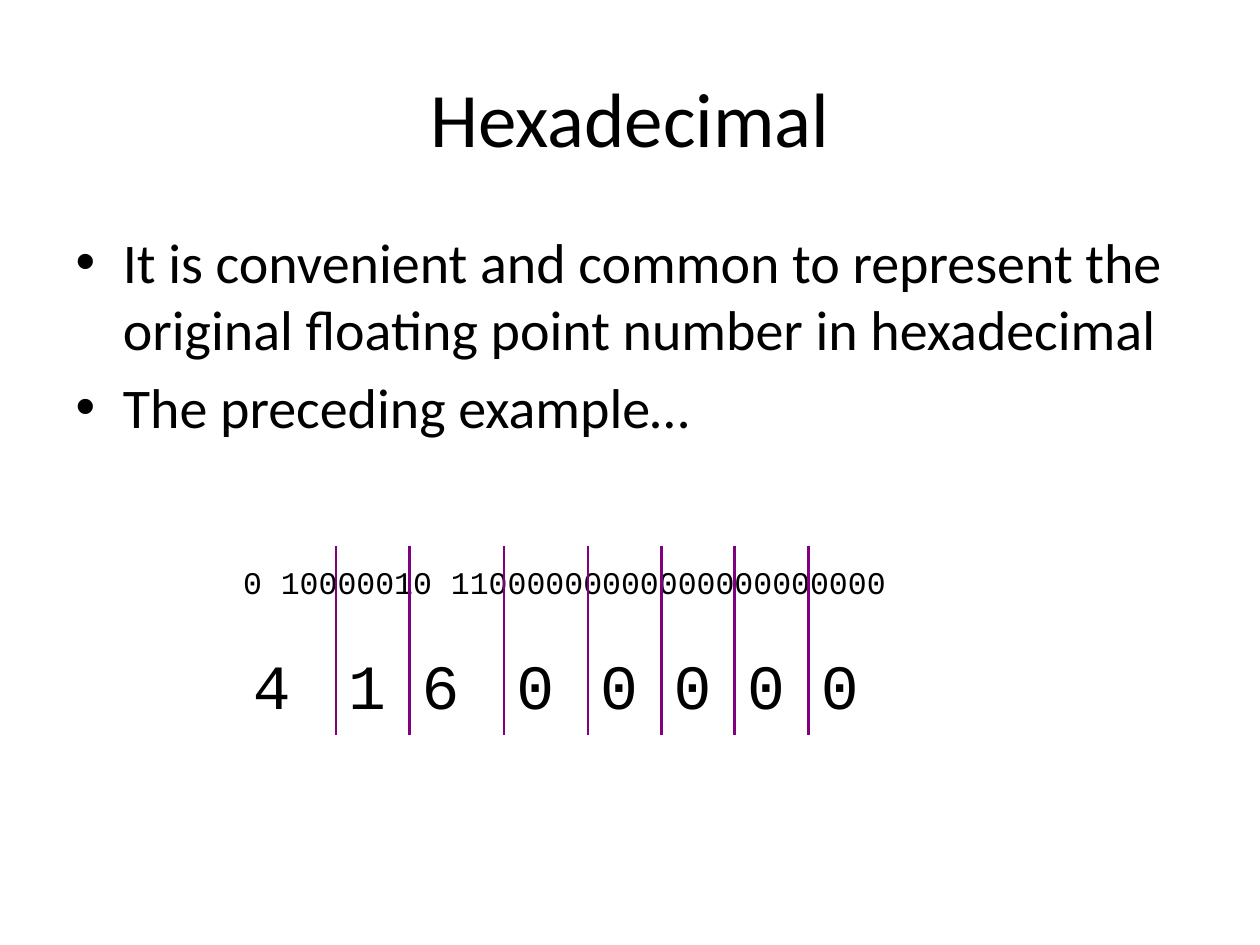
from pptx import Presentation
from pptx.dml.color import RGBColor
from pptx.enum.shapes import MSO_CONNECTOR as Connector
from pptx.enum.text import MSO_ANCHOR as Anchor, MSO_AUTO_SIZE as AutoSize, PP_ALIGN as Align
from pptx.oxml.ns import qn
from pptx.util import Cm, Pt

BODY_FONT, CODE_FONT = "Calibri", "Courier New"
BLACK, PURPLE = "000000", "800080"

TITLE_BOX = (1.27, 0.76, 22.86, 3.18)
LIST_BOX = (1.27, 4.45, 22.86, 12.57)
HEX_BOX = (4.65, 11, 17.78, 3.81)

BITS = "0 10000010 11000000000000000000000"
# Each hexadecimal digit with the offset of its group from the left of the box
HEX_DIGITS = [("4", 0.2), ("1", 2.12), ("6", 3.6), ("0", 5.51),
              ("0", 7.2), ("0", 8.68), ("0", 10.16), ("0", 11.65)]


def color(hex_string):
    return RGBColor.from_string(hex_string)


def place(shape, box):
    for name, value in zip(("left", "top", "width", "height"), box):
        setattr(shape, name, Cm(value))


def write(para, text, size, font):
    span = para.add_run()
    span.text = text
    for name, value in {"size": Pt(size), "name": font}.items():
        setattr(span.font, name, value)
    span.font.color.rgb = color(BLACK)


def fill_title(page, box, text):
    title = page.shapes.title
    place(title, box)
    title.text_frame.vertical_anchor = Anchor.MIDDLE
    para = title.text_frame.paragraphs[0]
    para.alignment = Align.CENTER
    write(para, text, 44, BODY_FONT)


def fill_list(page, box, items):
    body = page.placeholders[1]
    place(body, box)
    frame = body.text_frame
    for index, item in enumerate(items):
        para = frame.add_paragraph() if index else frame.paragraphs[0]
        write(para, item, 32, BODY_FONT)


def add_code(page, box, text, size, wrap):
    label = page.shapes.add_textbox(*map(Cm, box))
    frame = label.text_frame
    for name, value in {"word_wrap": wrap, "auto_size": AutoSize.SHAPE_TO_FIT_TEXT}.items():
        setattr(frame, name, value)
    write(frame.paragraphs[0], text, size, CODE_FONT)


def add_divider(page, x, top, bottom):
    divider = page.shapes.add_connector(Connector.STRAIGHT, Cm(x), Cm(top), Cm(x), Cm(bottom))
    divider.line.color.rgb = color(PURPLE)
    divider.line.width = Pt(1.5)
    properties = divider._element.spPr
    properties.append(properties.makeelement(qn("a:effectLst"), {}))


def add_hex_groups(page, box):
    """Show the bits above their hexadecimal digits, with a divider between groups."""
    left, top, width, height = box
    add_code(page, (left, top + 0.22, width, 1.02), BITS, 18, True)
    for _, offset in HEX_DIGITS[1:]:
        add_divider(page, left + offset, top, top + height)
    for digit, offset in HEX_DIGITS:
        add_code(page, (left + offset, top + 1.9, 1.27, 1.78), digit, 36, False)


def main():
    deck = Presentation()
    deck.slide_width, deck.slide_height = Cm(25.4), Cm(19.05)
    page = deck.slides.add_slide(deck.slide_layouts[1])
    fill_title(page, TITLE_BOX, "Hexadecimal")
    fill_list(page, LIST_BOX, [
        "It is convenient and common to represent the original floating point number in hexadecimal",
        "The preceding example…",
    ])
    add_hex_groups(page, HEX_BOX)
    deck.save("out.pptx")


if __name__ == "__main__":
    main()
